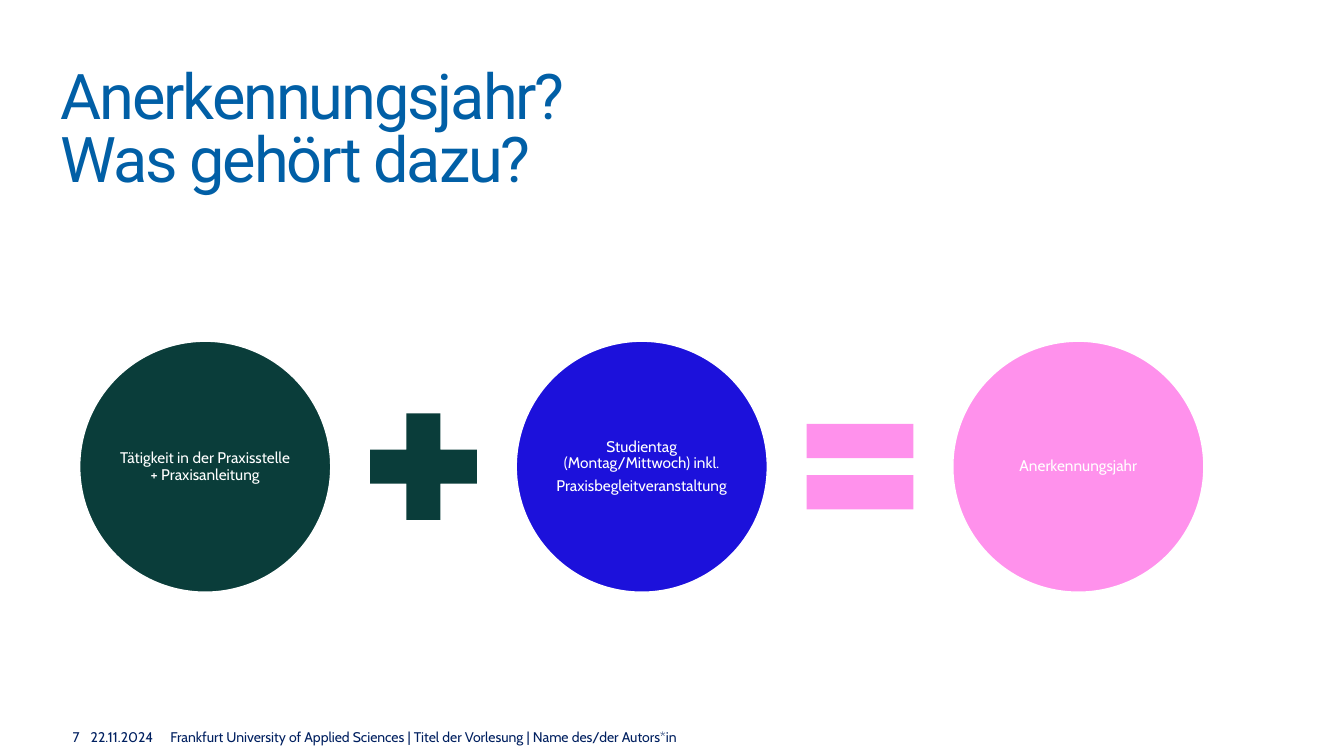
from dataclasses import dataclass

from pptx import Presentation
from pptx.dml.color import RGBColor
from pptx.enum.shapes import MSO_SHAPE
from pptx.enum.text import MSO_ANCHOR, PP_ALIGN
from pptx.shapes.autoshape import Shape
from pptx.slide import Slide
from pptx.text.text import TextFrame
from pptx.util import Inches, Pt

OVAL = MSO_SHAPE.OVAL
PLUS = MSO_SHAPE.MATH_PLUS
EQUAL = MSO_SHAPE.MATH_EQUAL
TOP = MSO_ANCHOR.TOP
MIDDLE = MSO_ANCHOR.MIDDLE
LEFT = PP_ALIGN.LEFT
RIGHT = PP_ALIGN.RIGHT
CENTER = PP_ALIGN.CENTER

WHITE = RGBColor(0xFF, 0xFF, 0xFF)
NAVY = RGBColor(0x00, 0x20, 0x60)
TITLE_BLUE = RGBColor(0x01, 0x5F, 0xA6)
GREEN = RGBColor(0x0A, 0x3D, 0x3A)
BLUE = RGBColor(0x1C, 0x11, 0xDB)
PINK = RGBColor(0xFF, 0x91, 0xEC)

BODY_FONT = "Cabin"
TITLE_FONT = "Roboto"

ROW_LEFT = 0.79
ROW_CENTER = 4.63
CIRCLE_SIZE = 2.49
SIGN_SIZE = 1.44
GAP = 0.2


@dataclass
class FooterField:
    text: str
    left: float
    width: float
    alignment: PP_ALIGN = LEFT


@dataclass
class EquationPart:
    preset: MSO_SHAPE
    size: float
    color: RGBColor
    lines: tuple[str, ...] = ()


FOOTER = (
    FooterField("7", 0.11, 0.68, RIGHT),
    FooterField("22.11.2024", 0.9, 0.68),
    FooterField(
        "Frankfurt University of Applied Sciences | Titel der Vorlesung | Name des/der Autors*in",
        1.69,
        10.18,
    ),
)

EQUATION = (
    EquationPart(OVAL, CIRCLE_SIZE, GREEN, ("Tätigkeit in der Praxisstelle + Praxisanleitung",)),
    EquationPart(PLUS, SIGN_SIZE, GREEN),
    EquationPart(
        OVAL, CIRCLE_SIZE, BLUE,
        ("Studientag (Montag/Mittwoch) inkl.", "Praxisbegleitveranstaltung"),
    ),
    EquationPart(EQUAL, SIGN_SIZE, PINK),
    EquationPart(OVAL, CIRCLE_SIZE, PINK, ("Anerkennungsjahr",)),
)


def write_text(
    frame: TextFrame, text: str, font_name: str, size: float, color: RGBColor,
    alignment: PP_ALIGN, anchor: MSO_ANCHOR, inset: float = 0,
) -> None:
    frame.word_wrap = True
    frame.vertical_anchor = anchor
    frame.margin_left = frame.margin_right = Inches(inset)
    frame.margin_top = frame.margin_bottom = Inches(inset)
    frame.text = text
    for paragraph in frame.paragraphs:
        paragraph.alignment = alignment
        paragraph.font.name = font_name
        paragraph.font.size = Pt(size)
        paragraph.font.color.rgb = color


def add_title(slide: Slide) -> None:
    title = slide.shapes.add_textbox(Inches(0.6), Inches(0.69), Inches(10.19), Inches(1.25))
    write_text(
        title.text_frame, "Anerkennungsjahr?\vWas gehört dazu?",
        TITLE_FONT, 45, TITLE_BLUE, LEFT, TOP,
    )
    paragraph = title.text_frame.paragraphs[0]
    paragraph.line_spacing = Pt(45)
    for run in paragraph.runs:
        run.font._element.set("spc", "-150")


def add_footer_field(slide: Slide, field: FooterField) -> None:
    box = slide.shapes.add_textbox(
        Inches(field.left), Inches(7.23), Inches(field.width), Inches(0.16)
    )
    write_text(box.text_frame, field.text, BODY_FONT, 10, NAVY, field.alignment, MIDDLE)


def add_equation_part(slide: Slide, part: EquationPart, left: float) -> Shape:
    shape = slide.shapes.add_shape(
        part.preset, Inches(left), Inches(ROW_CENTER - part.size / 2),
        Inches(part.size), Inches(part.size),
    )
    shape.shadow.inherit = False
    shape.fill.solid()
    shape.fill.fore_color.rgb = part.color
    if not part.lines:
        shape.line.fill.background()
        return shape
    shape.line.color.rgb = WHITE
    shape.line.width = Pt(1)
    write_text(
        shape.text_frame, "\n".join(part.lines), BODY_FONT, 11, WHITE, CENTER, MIDDLE, 0.02
    )
    for paragraph in shape.text_frame.paragraphs:
        paragraph.line_spacing = 0.9
        paragraph.space_after = Pt(4)
    return shape


def main() -> None:
    presentation = Presentation()
    presentation.slide_width = Inches(13.33)
    presentation.slide_height = Inches(7.5)
    slide = presentation.slides.add_slide(presentation.slide_layouts[6])

    add_title(slide)
    left = ROW_LEFT
    for part in EQUATION:
        add_equation_part(slide, part, left)
        left += part.size + GAP
    for field in FOOTER:
        add_footer_field(slide, field)

    presentation.save("out.pptx")


if __name__ == "__main__":
    main()
